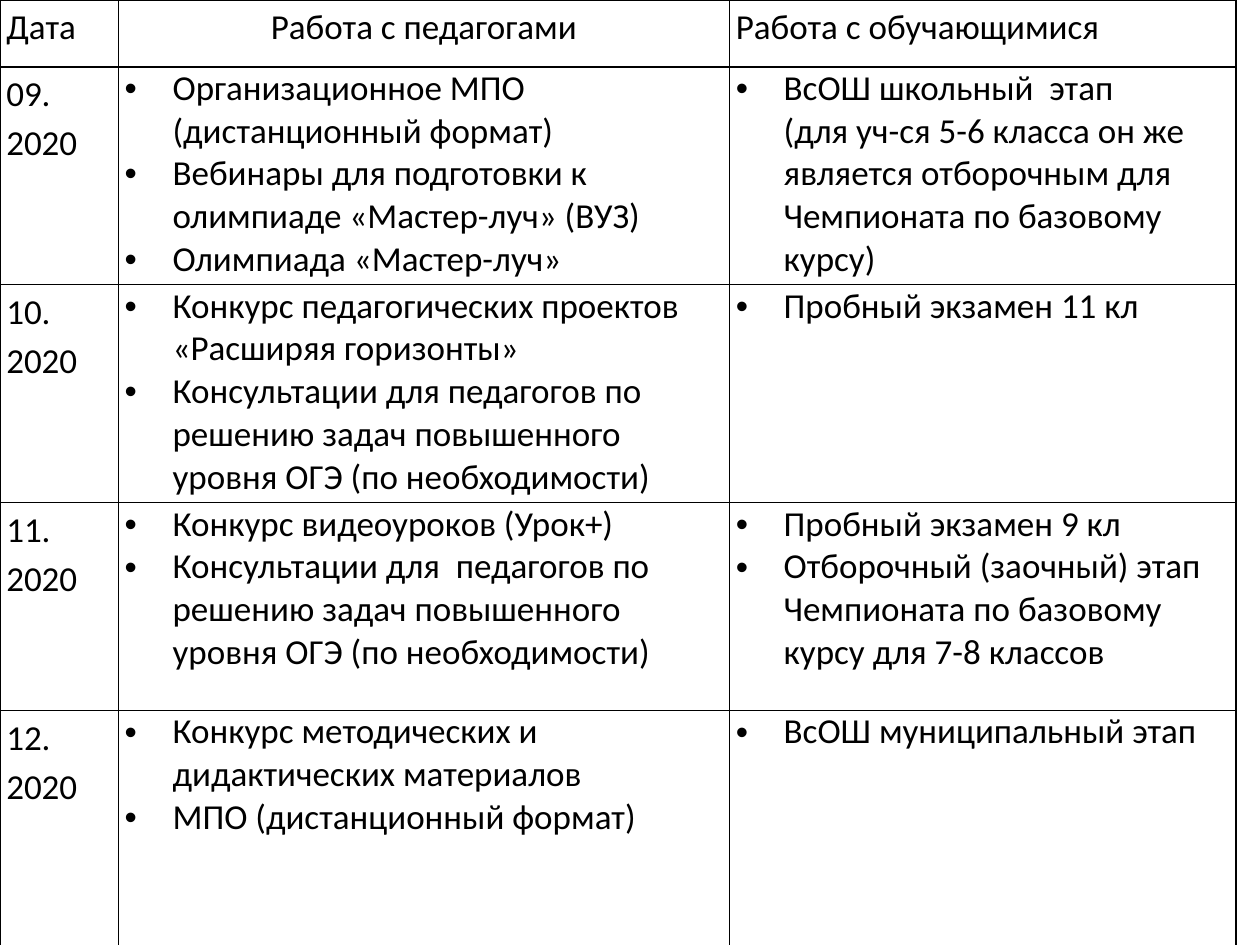
from lxml import etree
from pptx import Presentation
from pptx.dml.color import RGBColor
from pptx.enum.text import PP_ALIGN as Align
from pptx.oxml import parse_xml
from pptx.oxml.ns import qn
from pptx.util import Inches, Pt

NS = "http://schemas.openxmlformats.org/drawingml/2006/main"
COLS = [0.94, 4.85, 4.02]
ROWS = [0.53, 1.73, 1.73, 1.65, 2.11]
HEADS = ["Дата", "Работа с педагогами", "Работа с обучающимися"]
CONSULT = "решению задач повышенного уровня ОГЭ (по необходимости)"
PLAN = [
    ("09. 2020",
     ["Организационное МПО (дистанционный формат)",
      "Вебинары для подготовки к олимпиаде «Мастер-луч» (ВУЗ)",
      "Олимпиада «Мастер-луч»"],
     ["ВсОШ школьный  этап \n(для уч-ся 5-6 класса он же является "
      "отборочным для Чемпионата по базовому курсу)"]),
    ("10. 2020",
     ["Конкурс педагогических проектов «Расширяя горизонты»",
      "Консультации для педагогов по " + CONSULT],
     ["Пробный экзамен 11 кл"]),
    ("11. 2020",
     ["Конкурс видеоуроков (Урок+)",
      "Консультации для  педагогов по " + CONSULT],
     ["Пробный экзамен 9 кл",
      "Отборочный (заочный) этап Чемпионата по базовому курсу для 7-8 классов"]),
    ("12. 2020",
     ["Конкурс методических и дидактических материалов",
      "МПО (дистанционный формат)"],
     ["ВсОШ муниципальный этап"]),
]


def color(code):
    return RGBColor.from_string(code)


def frame(cell):
    """Give a cell its margins, white fill and black borders."""
    cell.margin_left = cell.margin_right = Inches(0.05)
    cell.margin_top = cell.margin_bottom = 0
    cell.fill.solid()
    cell.fill.fore_color.rgb = color("FFFFFF")
    props = cell._tc.get_or_add_tcPr()
    for i, side in enumerate("LRTB"):
        props.insert(i, parse_xml(
            f'<a:ln{side} xmlns:a="{NS}" w="{Pt(1)}"><a:solidFill>'
            f'<a:srgbClr val="000000"/></a:solidFill></a:ln{side}>'))


def bullet(para):
    props = para._p.get_or_add_pPr()
    props.set("marL", str(Inches(0.38)))
    props.set("indent", str(-Inches(0.38)))
    font = etree.Element(qn("a:buFont"), typeface="Arial")
    mark = etree.Element(qn("a:buChar"), char="•")
    props.insert(0, font)
    font.addnext(mark)


def write(cell, lines, listed=False, align=Align.LEFT):
    frame(cell)
    body = cell.text_frame
    for i, line in enumerate(lines):
        para = body.add_paragraph() if i else body.paragraphs[0]
        para.text = line
        para.alignment = align
        para.font.name = "Calibri"
        para.font.size = Pt(20)
        para.font.color.rgb = color("000000")
        if listed:
            bullet(para)
        else:
            para.line_spacing = 1.15


def add_plan(slide, left, top):
    """Place the calendar table with its corner at left, top."""
    table = slide.shapes.add_table(
        len(ROWS), len(COLS), left, top,
        Inches(sum(COLS)), Inches(sum(ROWS))).table
    table.first_row = table.horz_banding = False
    for col, width in zip(table.columns, COLS):
        col.width = Inches(width)
    for row, height in zip(table.rows, ROWS):
        row.height = Inches(height)
    for c, head in enumerate(HEADS):
        write(table.cell(0, c), [head],
              align=Align.CENTER if c == 1 else Align.LEFT)
    for r, (date, staff, pupils) in enumerate(PLAN, 1):
        write(table.cell(r, 0), [date])
        write(table.cell(r, 1), staff, listed=True)
        write(table.cell(r, 2), pupils, listed=True)


def main():
    deck = Presentation()
    deck.slide_width, deck.slide_height = Inches(10), Inches(7.5)
    slide = deck.slides.add_slide(deck.slide_layouts[6])
    add_plan(slide, 0, 0)
    deck.save("out.pptx")


if __name__ == "__main__":
    main()
